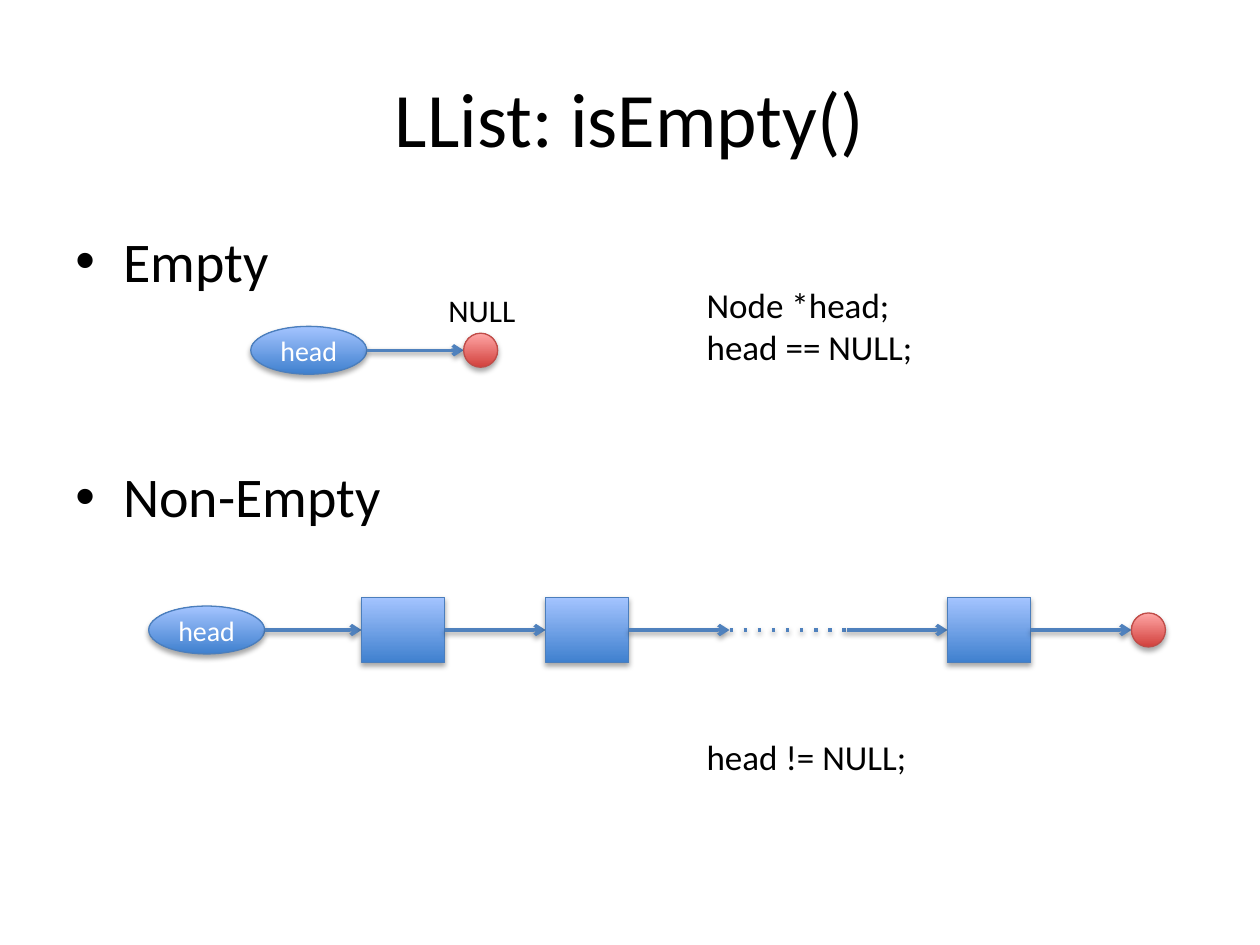
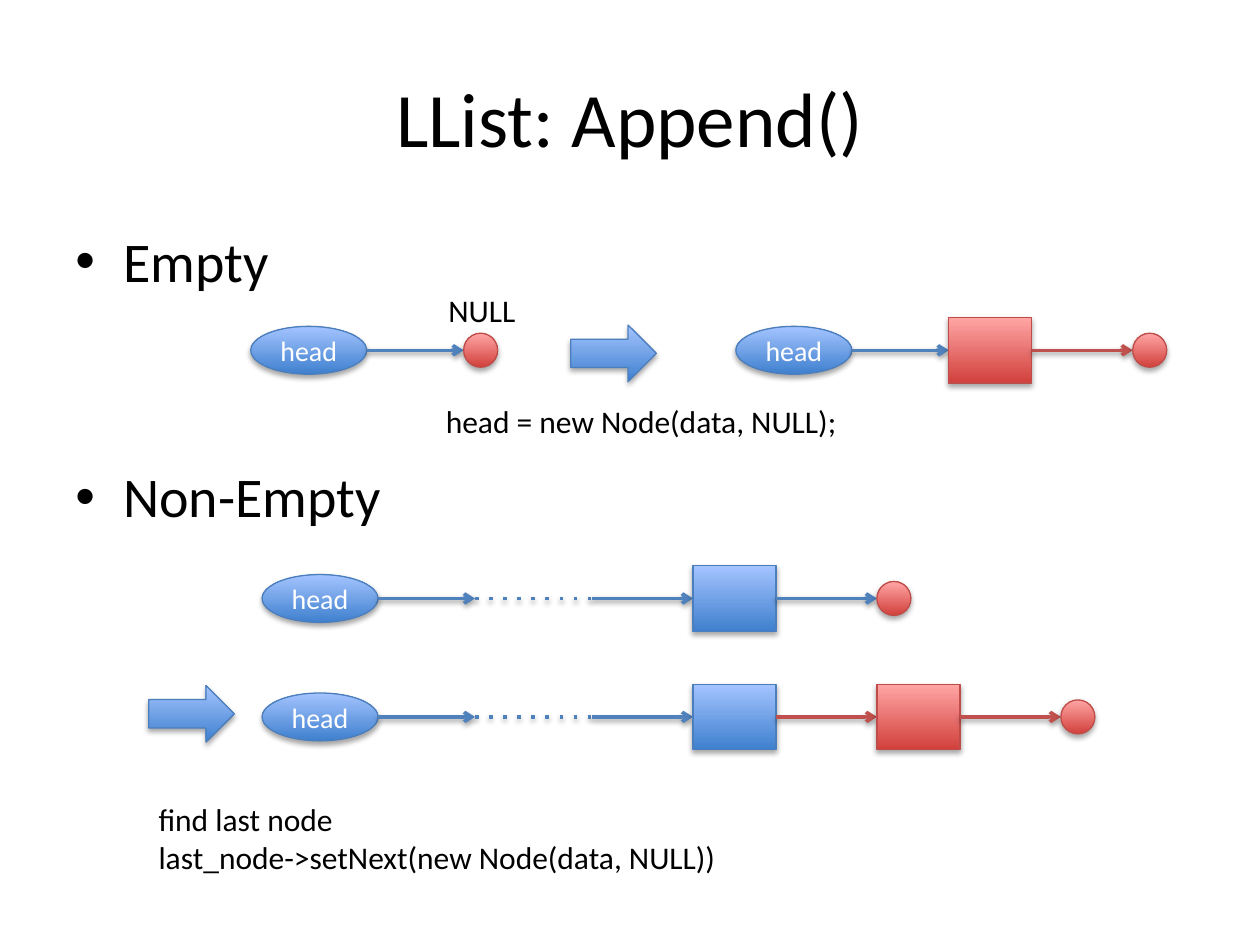
from lxml import etree
from pptx import Presentation
from pptx.dml.color import RGBColor
from pptx.enum.shapes import MSO_CONNECTOR, MSO_SHAPE
from pptx.enum.text import MSO_ANCHOR, PP_ALIGN
from pptx.oxml.ns import qn
from pptx.util import Inches, Pt

OVAL, RECTANGLE, ARROW = MSO_SHAPE.OVAL, MSO_SHAPE.RECTANGLE, MSO_SHAPE.RIGHT_ARROW
STRAIGHT = MSO_CONNECTOR.STRAIGHT
MIDDLE, CENTER, LEFT = MSO_ANCHOR.MIDDLE, PP_ALIGN.CENTER, PP_ALIGN.LEFT
LEFT_SIDE, RIGHT_SIDE = 1, 3

FONT = "Calibri"
BLACK, WHITE = RGBColor(0, 0, 0), RGBColor(255, 255, 255)
BLUE_LINK, RED_LINK = RGBColor(0x4F, 0x81, 0xBD), RGBColor(0xC0, 0x50, 0x4D)
# Each palette: bottom colour, top colour, outline
BLUE = RGBColor(0x3F, 0x80, 0xCE), RGBColor(0xA4, 0xC4, 0xFF), RGBColor(0x4B, 0x7E, 0xBC)
RED = RGBColor(0xD1, 0x40, 0x3C), RGBColor(0xFF, 0xA6, 0xA5), RGBColor(0xBF, 0x4C, 0x48)

# Content: chains are (left, middle, parts), notes are (box, size, lines)
BULLETS = ["Empty", "Non-Empty"]
EMPTY_CHAIN = (1.99, 2.78, "head link null")
NULL_LABEL = ((3.46, 2.26, 0.75, 0.4), 18, ["NULL"])
SLIDES = [
    {
        "title": "LList: isEmpty()",
        "chains": [(1.18, 5, "head link node link node link dots link node link null")],
        "arrows": [],
        "notes": [
            ((5.51, 2.2, 1.85, 0.77), 20, ["Node *head;", "head == NULL;"]),
            ((5.51, 5.79, 1.8, 0.44), 20, ["head != NULL;"]),
        ],
    },
    {
        "title": "LList: Append()",
        "chains": [
            (5.84, 2.78, "head link new new_link null"),
            (2.08, 4.75, "head link dots link node link null"),
            (2.08, 5.69, "head link dots link node new_link new new_link null"),
        ],
        "arrows": [(4.53, 2.58), (1.18, 5.44)],
        "notes": [
            ((3.44, 3.14, 3.34, 0.4), 18, ["head = new Node(data, NULL);"]),
            ((1.16, 6.3, 4.68, 0.71), 18,
             ["find last node", "last_node->setNext(new Node(data, NULL))"]),
        ],
    },
]

# Parts of a chain: shape, width, height, palette, text
SHAPES = {
    "head": (OVAL, 0.92, 0.38, BLUE, "head"),
    "node": (RECTANGLE, 0.66, 0.52, BLUE, ""),
    "new": (RECTANGLE, 0.66, 0.52, RED, ""),
    "null": (OVAL, 0.27, 0.27, RED, ""),
    "arrow": (ARROW, 0.68, 0.45, BLUE, ""),
}
# Links of a chain: length, colour
LINKS = {"link": (0.8, BLUE_LINK), "new_link": (0.8, RED_LINK), "dots": (0.93, BLUE_LINK)}
HEAD_LINK_LENGTH = 0.77


def add_child(parent, tag, **attributes):
    child = etree.SubElement(parent, qn(tag))
    for name, value in attributes.items():
        child.set(name, str(value))
    return child


def add_shadow(properties, distance, percent):
    effects = properties.find(qn("a:effectLst"))
    if effects is None:
        effects = add_child(properties, "a:effectLst")
    shadow = add_child(effects, "a:outerShdw", blurRad=Pt(3.1), dist=Pt(distance),
                       dir=5400000, rotWithShape=0)
    add_child(add_child(shadow, "a:srgbClr", val="000000"), "a:alpha", val=percent * 1000)


def write(frame, lines, size, color=BLACK, align=LEFT):
    frame.text = "\n".join(lines)
    for para in frame.paragraphs:
        para.alignment = align
        para.font.name, para.font.size = FONT, Pt(size)
        para.font.color.rgb = color


def add_text(page, box, size, lines, align=LEFT, wrap=False):
    frame = page.shapes.add_textbox(*map(Inches, box)).text_frame
    frame.word_wrap = wrap
    write(frame, lines, size, align=align)
    return frame


def add_part(page, kind, left, top):
    preset, width, height, (bottom_color, top_color, outline), text = SHAPES[kind]
    shape = page.shapes.add_shape(preset, *map(Inches, (left, top, width, height)))
    shape.fill.gradient()
    shape.fill.gradient_angle = 90
    for stop, color in zip(shape.fill.gradient_stops, (bottom_color, top_color)):
        stop.color.rgb = color
    shape.line.color.rgb, shape.line.width = outline, Pt(0.75)
    shape.shadow.inherit = False
    add_shadow(shape._element.spPr, 1.8, 35)
    if text:
        frame = shape.text_frame
        frame.word_wrap, frame.vertical_anchor = False, MIDDLE
        write(frame, [text], 16, WHITE, CENTER)
    return shape


def add_link(page, kind, start, end, middle):
    link = page.shapes.add_connector(STRAIGHT, *map(Inches, (start, middle, end, middle)))
    link.line.color.rgb, link.line.width = LINKS[kind][1], Pt(2)
    outline = link.line._get_or_add_ln()
    if kind == "dots":
        add_child(outline, "a:prstDash", val="dot")
    else:
        add_child(outline, "a:tailEnd", type="arrow")
    add_shadow(link._element.spPr, 1.6, 38)
    return link


def add_chain(page, left, middle, parts):
    """Lay the parts out from left to right and join links to the rectangles."""
    previous_kind, previous = None, None
    for kind in parts.split():
        if kind in LINKS:
            length = HEAD_LINK_LENGTH if previous_kind == "head" else LINKS[kind][0]
            item = add_link(page, kind, left, left + length, middle)
            if previous_kind in ("node", "new"):
                item.begin_connect(previous, RIGHT_SIDE)
        else:
            length, height = SHAPES[kind][1:3]
            item = add_part(page, kind, left, middle - height / 2)
            if kind in ("node", "new"):
                previous.end_connect(item, LEFT_SIDE)
        left += length
        previous_kind, previous = kind, item


def add_bullets(page):
    frame = add_text(page, (0.5, 1.75, 9, 4.95), 32, BULLETS, wrap=True)
    for para in frame.paragraphs:
        properties = para._p.get_or_add_pPr()
        properties.set("marL", str(Inches(0.38)))
        properties.set("indent", str(-Inches(0.38)))
        add_child(properties, "a:buFont", typeface="Arial")
        add_child(properties, "a:buChar", char="•")
    # Room for the drawing of the empty list
    frame.paragraphs[1].space_before = Pt(96)


def main():
    deck = Presentation()
    deck.slide_width, deck.slide_height = Inches(10), Inches(7.5)
    for content in SLIDES:
        page = deck.slides.add_slide(deck.slide_layouts[6])
        title = add_text(page, (0.5, 0.3, 9, 1.25), 44, [content["title"]], CENTER, True)
        title.vertical_anchor = MIDDLE
        add_bullets(page)
        for chain in [EMPTY_CHAIN] + content["chains"]:
            add_chain(page, *chain)
        for left, top in content["arrows"]:
            add_part(page, "arrow", left, top)
        for note in [NULL_LABEL] + content["notes"]:
            add_text(page, *note)
    deck.save("out.pptx")


if __name__ == "__main__":
    main()
